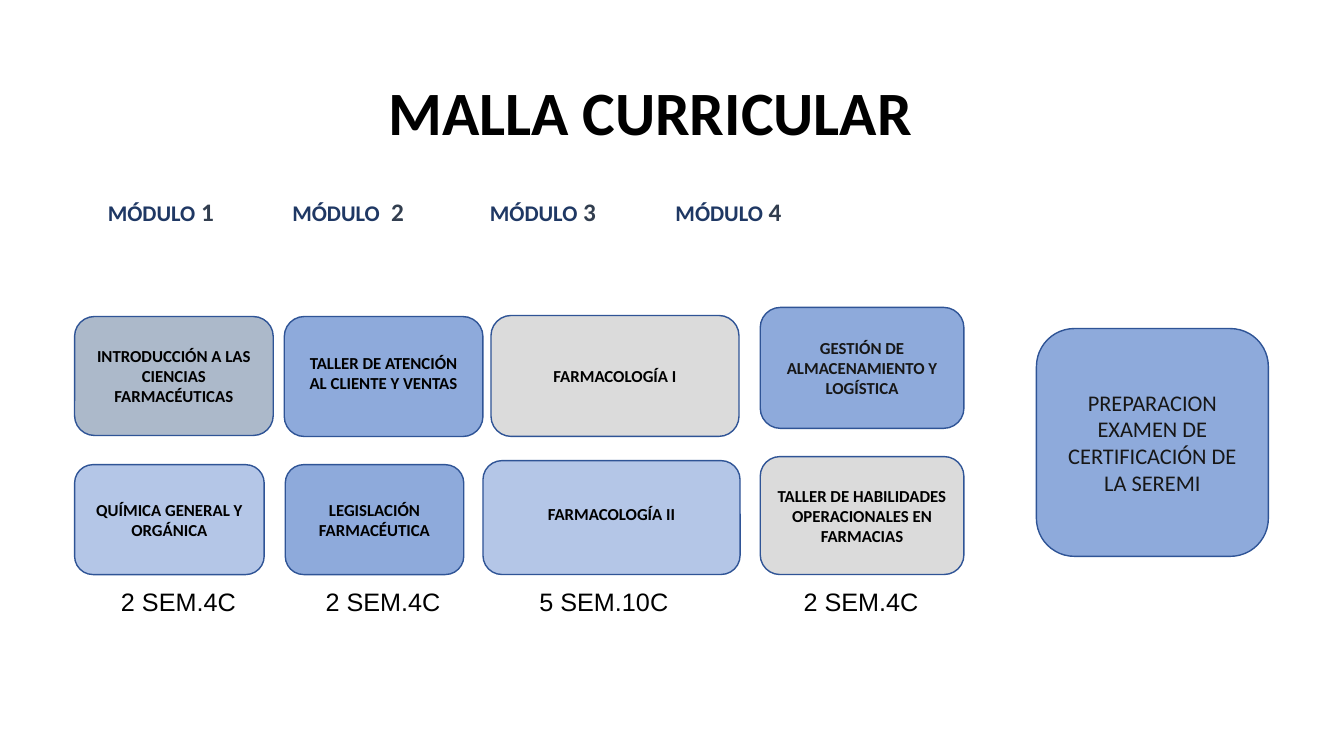
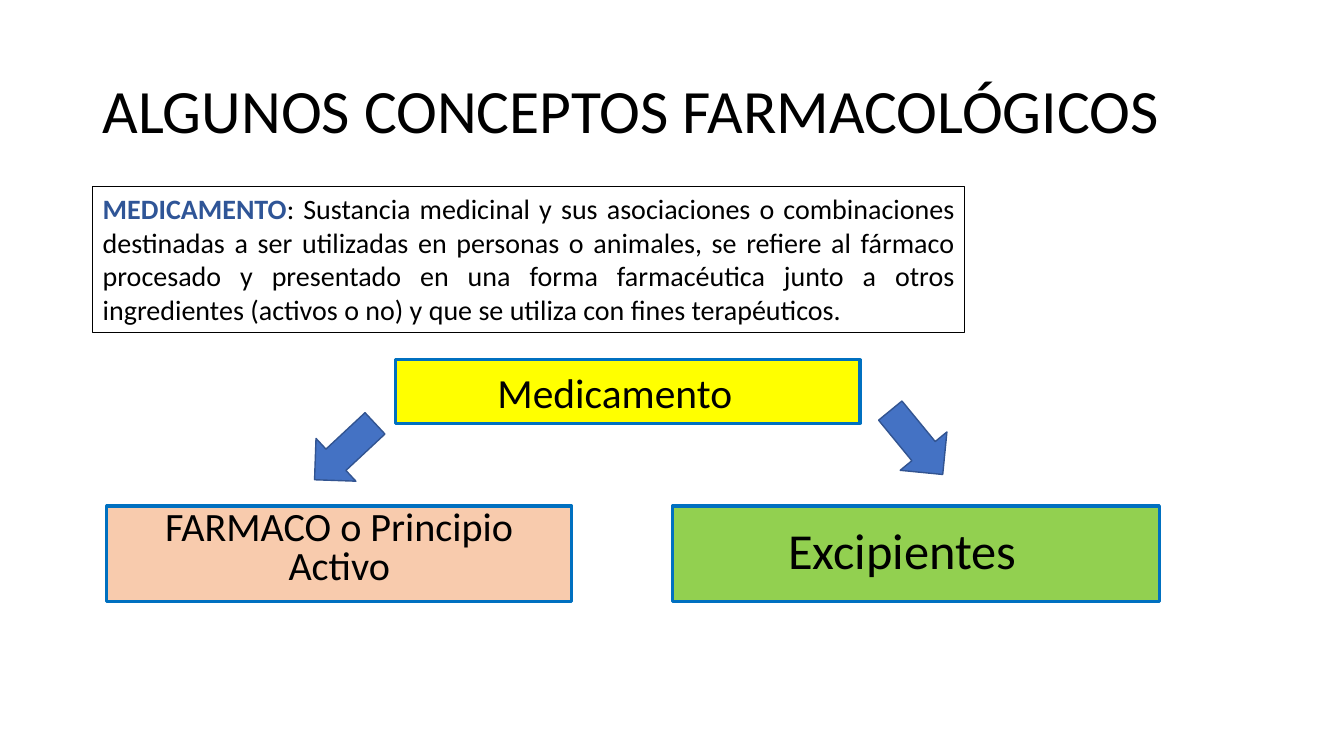
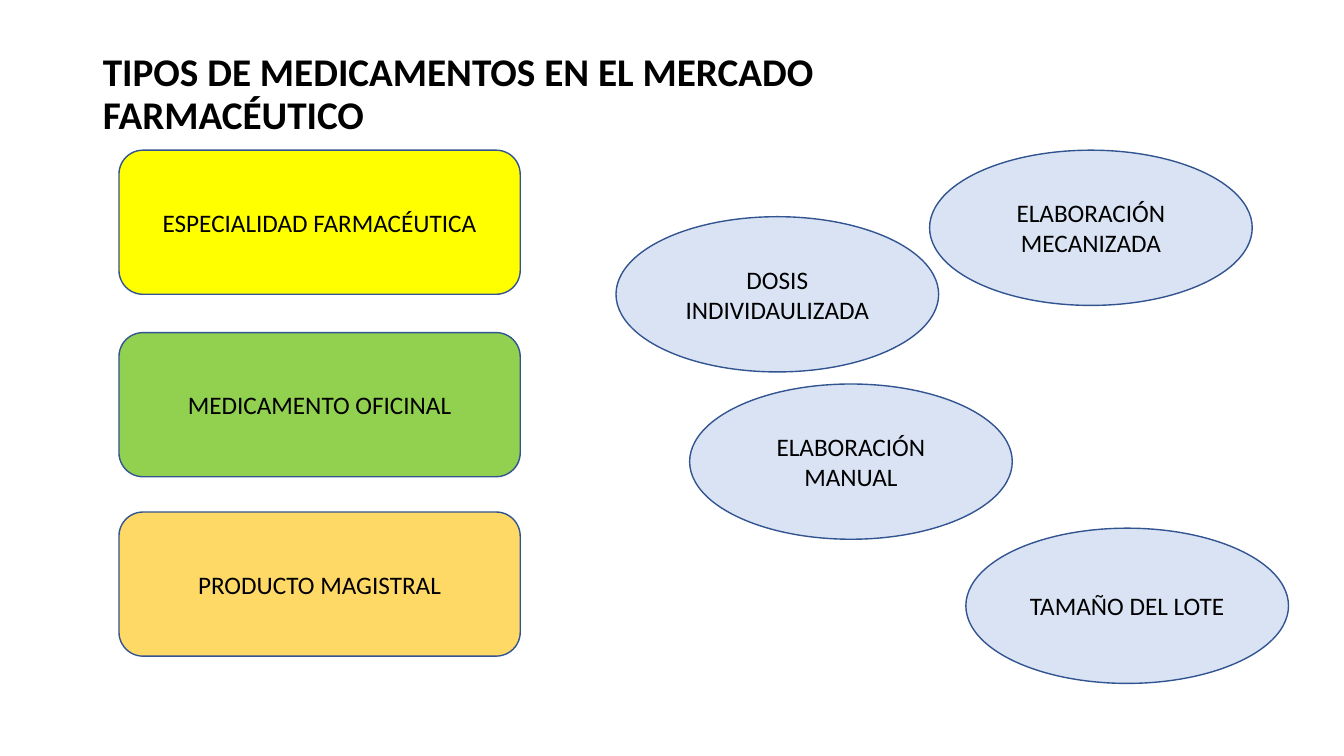
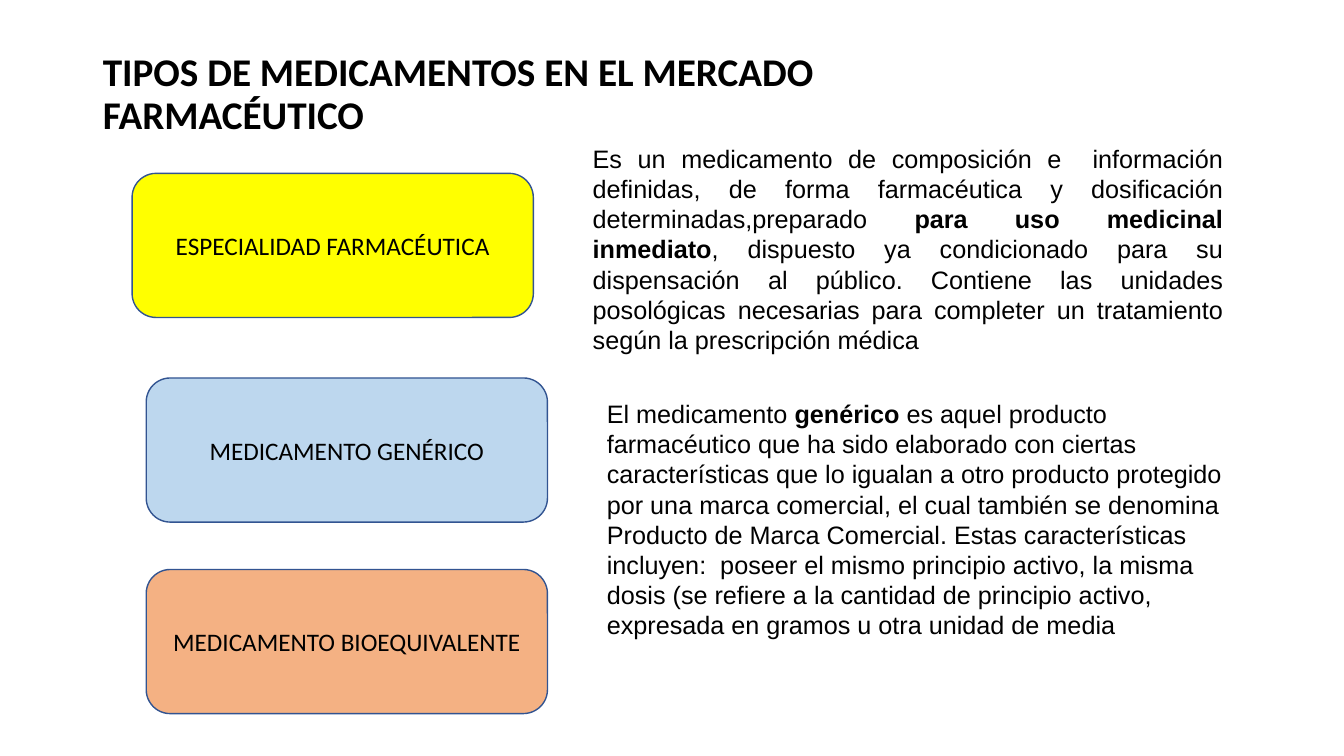
from pptx import Presentation
from pptx.dml.color import RGBColor
from pptx.enum.shapes import MSO_SHAPE
from pptx.enum.text import MSO_ANCHOR, PP_ALIGN
from pptx.util import Inches, Pt

# Shared colours and fonts
BLACK = RGBColor(0x00, 0x00, 0x00)
CHARCOAL = RGBColor(0x17, 0x17, 0x17)
NAVY = RGBColor(0x1F, 0x38, 0x64)
SLATE = RGBColor(0x32, 0x3E, 0x4F)
TERM_BLUE = RGBColor(0x2F, 0x55, 0x97)
COURSE_EDGE = RGBColor(0x2F, 0x54, 0x96)
EDGE = RGBColor(0x32, 0x54, 0x91)
BRIGHT_BLUE = RGBColor(0x00, 0x70, 0xC0)
ARROW_BLUE = RGBColor(0x44, 0x72, 0xC4)
STEEL = RGBColor(0xAC, 0xB9, 0xCA)
LIGHT_BLUE = RGBColor(0xB4, 0xC6, 0xE7)
MID_BLUE = RGBColor(0x8E, 0xAA, 0xDB)
PALE_BLUE = RGBColor(0xDA, 0xE3, 0xF3)
SKY = RGBColor(0xBD, 0xD7, 0xEE)
GRAY = RGBColor(0xDB, 0xDB, 0xDB)
YELLOW = RGBColor(0xFF, 0xFF, 0x00)
GREEN = RGBColor(0x92, 0xD0, 0x50)
GOLD = RGBColor(0xFF, 0xD9, 0x66)
PEACH = RGBColor(0xF8, 0xCB, 0xAD)
ORANGE = RGBColor(0xF4, 0xB1, 0x83)
BODY_FONT = "Calibri"
PLAIN_FONT = "Arial"
INSETS = (0.1, 0.05, 0.1, 0.05)
RAISED = (0.1, 0.05, 0.1, 0.13)

# Slide 1: text, (left, top, width, height), fill, text colour, insets
COURSES = [
    ("INTRODUCCIÓN A LAS CIENCIAS FARMACÉUTICAS", (0.74, 3.14, 1.97, 1.18), STEEL, BLACK, INSETS),
    ("QUÍMICA GENERAL Y ORGÁNICA", (0.74, 4.61, 1.88, 1.09), LIGHT_BLUE, BLACK, INSETS),
    ("TALLER DE ATENCIÓN AL CLIENTE Y VENTAS", (2.82, 3.14, 1.97, 1.19), MID_BLUE, BLACK, RAISED),
    ("LEGISLACIÓN FARMACÉUTICA", (2.83, 4.61, 1.77, 1.09), MID_BLUE, BLACK, INSETS),
    ("FARMACOLOGÍA I", (4.87, 3.13, 2.46, 1.2), GRAY, BLACK, INSETS),
    ("FARMACOLOGÍA II", (4.79, 4.57, 2.55, 1.13), LIGHT_BLUE, BLACK, RAISED),
    ("GESTIÓN DE ALMACENAMIENTO Y LOGÍSTICA", (7.54, 3.05, 2.02, 1.2), MID_BLUE, CHARCOAL, INSETS),
    ("TALLER DE HABILIDADES OPERACIONALES EN FARMACIAS", (7.54, 4.53, 2.02, 1.17), GRAY, BLACK, INSETS),
]
EXAM = "PREPARACION EXAMEN DE CERTIFICACIÓN DE LA SEREMI"
# Module number, its left, duration, its left
MODULES = [
    (" 1", 1.07, "2 SEM.4C", 1.2),
    ("  2", 2.9, "2 SEM.4C", 3.23),
    (" 3", 4.86, "5 SEM.10C", 5.35),
    (" 4", 6.7, "2 SEM.4C", 7.97),
]

# Slide 2
DEFINITION = [
    ("MEDICAMENTO", {"bold": True, "color": TERM_BLUE}),
    (": Sustancia medicinal y sus asociaciones o combinaciones destinadas a ser utilizadas "
     "en personas o animales, se refiere al fármaco procesado y presentado en una forma "
     "farmacéutica junto a otros ingredientes (activos o no) y que se utiliza con fines "
     "terapéuticos.", {}),
]
# Text, place, fill, size, line spacing, anchor, insets
CONCEPTS = [
    ("Medicamento", (3.92, 3.57, 4.61, 0.63), YELLOW, 29.6, 1, MSO_ANCHOR.MIDDLE, (0.1, 0.05, 0.35, 0.05)),
    ("FARMACO o Principio Activo", (1.06, 5.02, 4.61, 0.95), PEACH, 28.7, 0.8, MSO_ANCHOR.TOP, INSETS),
    ("Excipientes", (6.67, 5.02, 4.83, 0.95), GREEN, 36, 1, MSO_ANCHOR.MIDDLE, (0.1, 0.05, 0.37, 0.13)),
]
ARROWS = [((3.13, 4.07, 0.58, 0.82), 47), ((8.79, 3.98, 0.6, 0.82), 320.6)]

# Slides 3 and 4
TYPES_TITLE = "TIPOS DE MEDICAMENTOS EN EL MERCADO FARMACÉUTICO"
MARKET_TYPES = [
    ("ESPECIALIDAD FARMACÉUTICA", 1.18, 1.49, YELLOW),
    ("MEDICAMENTO OFICINAL", 1.18, 3.3, GREEN),
    ("PRODUCTO MAGISTRAL", 1.18, 5.08, GOLD),
]
FEATURES = [
    ("DOSIS INDIVIDAULIZADA", 6.11, 2.15),
    ("ELABORACIÓN MANUAL", 6.84, 3.81),
    ("ELABORACIÓN MECANIZADA", 9.22, 1.49),
    ("TAMAÑO DEL LOTE", 9.58, 5.24),
]
DEFINED_TYPES = [
    ("ESPECIALIDAD FARMACÉUTICA", 1.31, 1.72, YELLOW),
    ("MEDICAMENTO GENÉRICO", 1.45, 3.75, SKY),
    ("MEDICAMENTO BIOEQUIVALENTE", 1.45, 5.65, ORANGE),
]
EXPLANATIONS = [
    ((5.78, 1.37, 6.45, 2.52), PP_ALIGN.JUSTIFY, [
        ("Es un medicamento de composición e  información definidas, de forma farmacéutica y "
         "dosificación determinadas,preparado ", {}),
        ("para uso medicinal inmediato", {"bold": True}),
        (", dispuesto ya condicionado para su dispensación al público. Contiene las unidades "
         "posológicas necesarias para completer un tratamiento según la prescripción médica", {}),
    ]),
    ((5.92, 3.9, 6.45, 2.52), PP_ALIGN.LEFT, [
        ("El medicamento ", {}),
        ("genérico", {"bold": True}),
        (" es aquel producto farmacéutico que ha sido elaborado con ciertas características que "
         "lo igualan a otro producto protegido por una marca comercial, el cual también se "
         "denomina Producto de Marca Comercial. Estas características incluyen:  poseer el "
         "mismo principio activo, la misma dosis (se refiere a la cantidad de principio activo, "
         "expresada en gramos u otra unidad de media", {}),
    ]),
]


def write(shape, text, size, bold=False, color=BLACK, font=BODY_FONT, align=PP_ALIGN.CENTER,
          anchor=MSO_ANCHOR.MIDDLE, insets=INSETS, spacing=1, wrap=True):
    """Put one paragraph, a string or a list of (text, format) runs, into a shape."""
    frame = shape.text_frame
    frame.word_wrap = wrap
    frame.vertical_anchor = anchor
    (frame.margin_left, frame.margin_top,
     frame.margin_right, frame.margin_bottom) = map(Inches, insets)
    paragraph = frame.paragraphs[0]
    paragraph.alignment = align
    paragraph.line_spacing = spacing
    paragraph.font.name = font
    paragraph.font.size = Pt(size)
    paragraph.font.bold = bold
    paragraph.font.color.rgb = color
    for words, style in ([(text, {})] if isinstance(text, str) else text):
        run = paragraph.add_run()
        run.text = words
        if "bold" in style:
            run.font.bold = style["bold"]
        if "color" in style:
            run.font.color.rgb = style["color"]
        if "size" in style:
            run.font.size = Pt(style["size"])


def add_box(slide, kind, place, fill, edge, weight=1):
    shape = slide.shapes.add_shape(kind, *map(Inches, place))
    shape.shadow.inherit = False
    if fill is None:
        shape.fill.background()
    else:
        shape.fill.solid()
        shape.fill.fore_color.rgb = fill
    shape.line.color.rgb = edge
    shape.line.width = Pt(weight)
    return shape


def add_text(slide, place, text, size, **style):
    write(slide.shapes.add_textbox(*map(Inches, place)), text, size,
          **{"align": PP_ALIGN.LEFT, **style})


def add_titled_slide(presentation, text, place, size, bold):
    slide = presentation.slides.add_slide(presentation.slide_layouts[5])
    title = slide.shapes.title
    title.left, title.top, title.width, title.height = map(Inches, place)
    write(title, text, size, bold, align=PP_ALIGN.LEFT, spacing=0.9)
    return slide


def add_types_slide(presentation, types):
    slide = add_titled_slide(presentation, TYPES_TITLE, (0.92, 0.4, 9.73, 1.09), 28, True)
    for text, left, top, fill in types:
        write(add_box(slide, MSO_SHAPE.ROUNDED_RECTANGLE, (left, top, 3.98, 1.43), fill, EDGE), text, 18)
    return slide


def build_curriculum(presentation):
    slide = add_titled_slide(presentation, "MALLA CURRICULAR", (3.75, 0.42, 5.59, 1.45), 44, True)
    for text, place, fill, color, insets in COURSES:
        box = add_box(slide, MSO_SHAPE.ROUNDED_RECTANGLE, place, fill, COURSE_EDGE)
        write(box, text, 12, True, color, insets=insets)
    exam = add_box(slide, MSO_SHAPE.ROUNDED_RECTANGLE, (10.28, 3.26, 2.3, 2.26), MID_BLUE, COURSE_EDGE)
    write(exam, EXAM, 16, color=CHARCOAL)
    # Module headings above, durations below
    no_insets = (0, 0, 0, 0)
    for number, left, duration, duration_left in MODULES:
        heading = [("MÓDULO", {}), (number, {"size": 18, "color": SLATE})]
        add_text(slide, (left, 1.9, 1.3, 0.4), heading, 16, bold=True, color=NAVY,
                 insets=no_insets, wrap=False)
        add_text(slide, (duration_left, 5.77, 1.4, 0.4), duration, 18, font=PLAIN_FONT,
                 insets=no_insets, wrap=False)


def build_concepts(presentation):
    slide = add_titled_slide(presentation, "ALGUNOS CONCEPTOS FARMACOLÓGICOS",
                             (0.92, 0.4, 11.5, 1.45), 44, False)
    definition = add_box(slide, MSO_SHAPE.RECTANGLE, (0.92, 1.85, 8.65, 1.45), None, BLACK, 0.75)
    write(definition, DEFINITION, 20, align=PP_ALIGN.JUSTIFY, anchor=MSO_ANCHOR.TOP)
    for text, place, fill, size, spacing, anchor, insets in CONCEPTS:
        box = add_box(slide, MSO_SHAPE.RECTANGLE, place, fill, BRIGHT_BLUE, 2.25)
        write(box, text, size, anchor=anchor, insets=insets, spacing=spacing)
    for place, angle in ARROWS:
        add_box(slide, MSO_SHAPE.DOWN_ARROW, place, ARROW_BLUE, EDGE).rotation = angle


def build_features(presentation):
    slide = add_types_slide(presentation, MARKET_TYPES)
    for text, left, top in FEATURES:
        write(add_box(slide, MSO_SHAPE.OVAL, (left, top, 3.2, 1.54), PALE_BLUE, EDGE), text, 18)


def build_explanations(presentation):
    slide = add_types_slide(presentation, DEFINED_TYPES)
    for place, align, runs in EXPLANATIONS:
        add_text(slide, place, runs, 18, font=PLAIN_FONT, align=align, anchor=MSO_ANCHOR.TOP)


def main():
    presentation = Presentation()
    presentation.slide_width = Inches(13.33)
    presentation.slide_height = Inches(7.5)
    for build in (build_curriculum, build_concepts, build_features, build_explanations):
        build(presentation)
    presentation.save("out.pptx")


if __name__ == "__main__":
    main()
